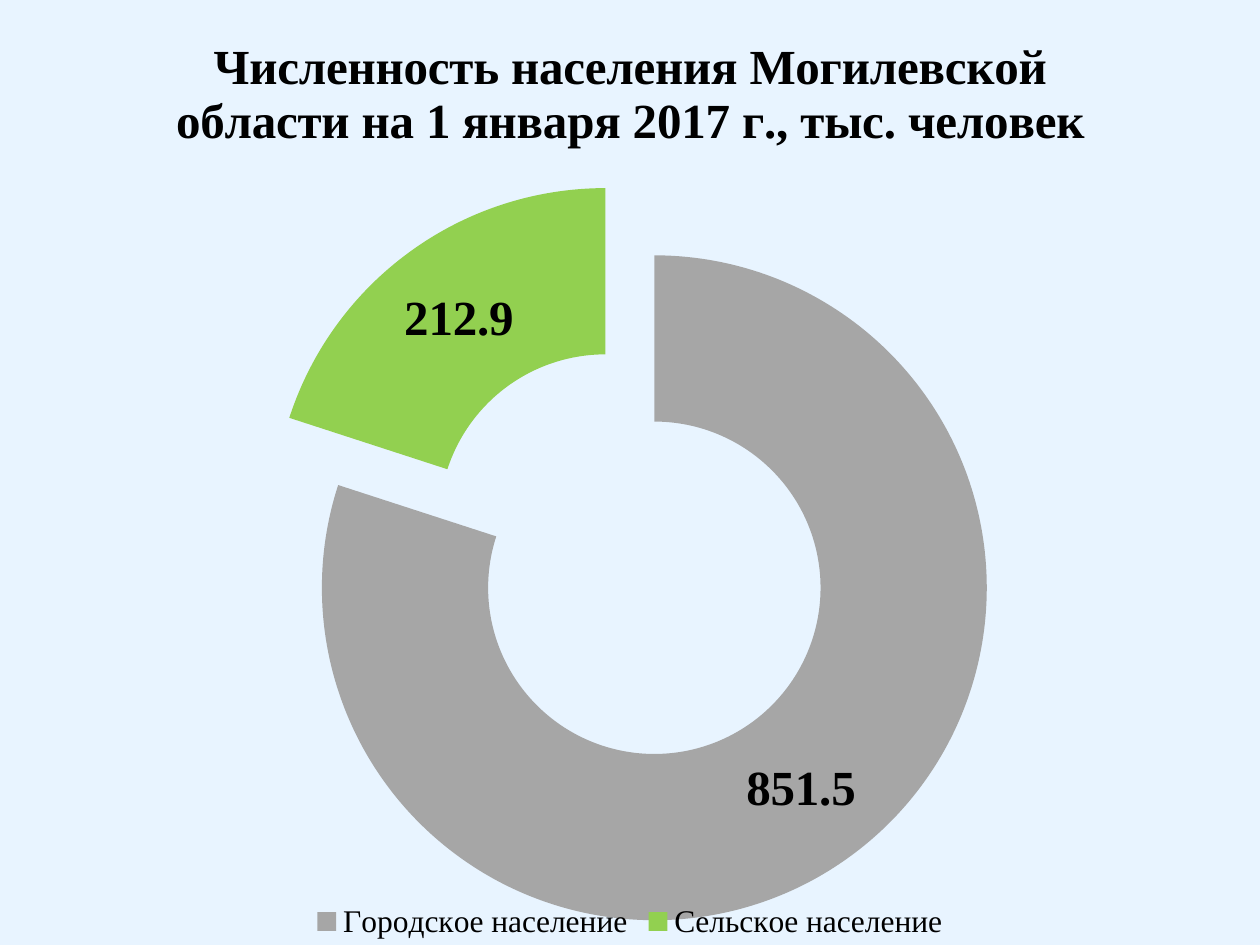
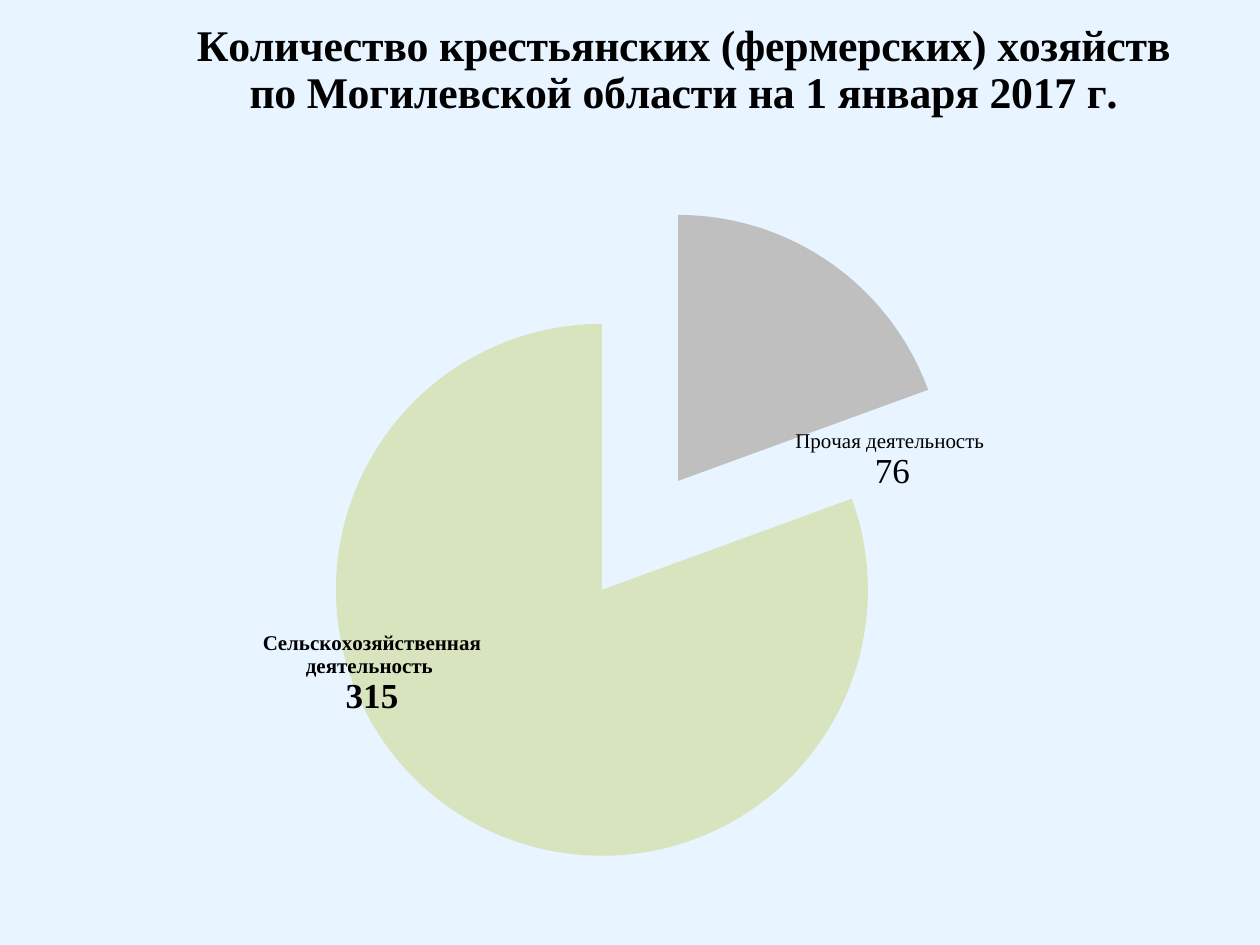
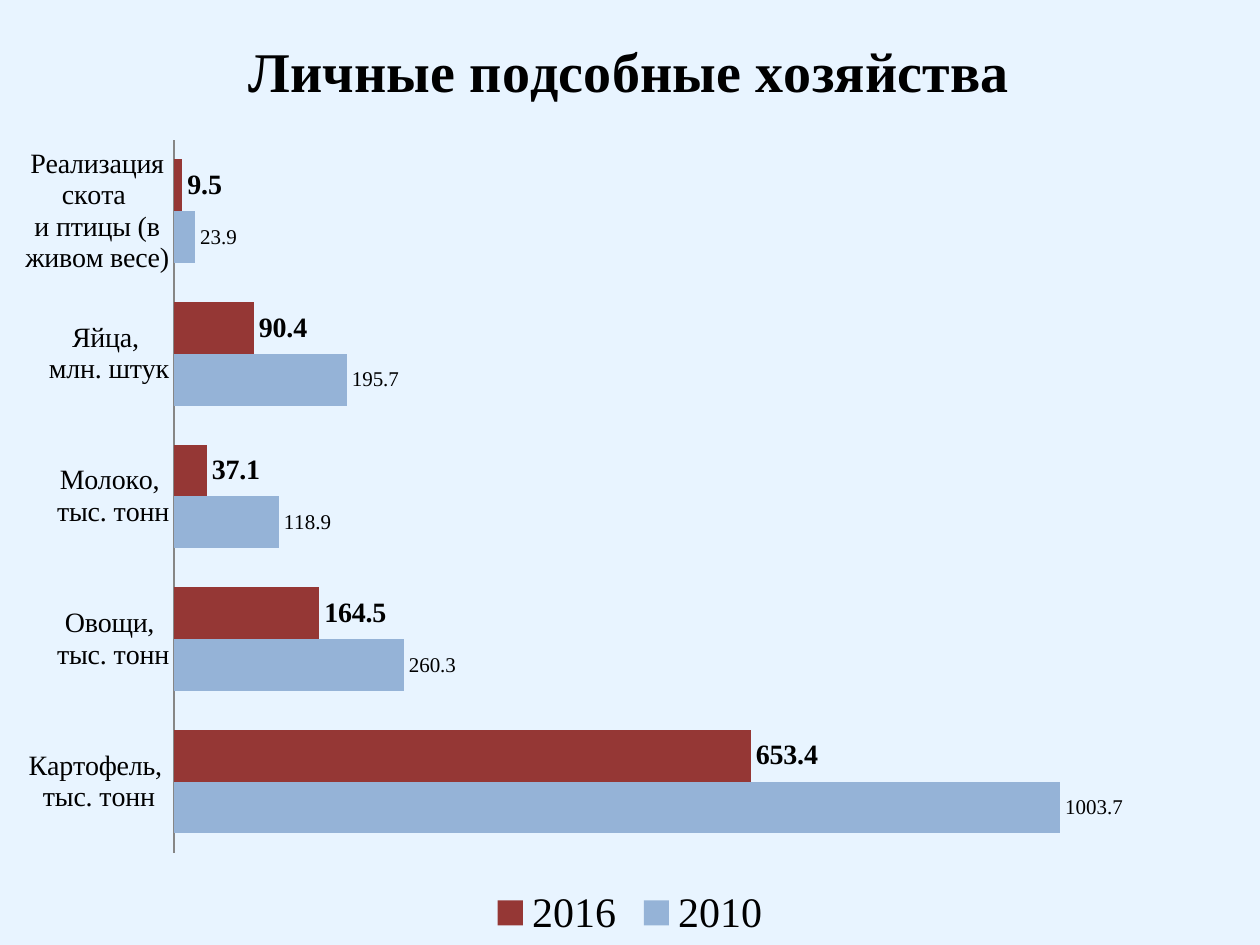
"""Build three chart slides on the population and farming of the Mogilev region."""
import pptx
import pptx.chart.data
import pptx.dml.color
import pptx.enum.chart
import pptx.oxml
import pptx.oxml.ns
import pptx.util

COLORS = {
    "background": "E8F4FF",
    "text": "000000",
    "urban": "A6A6A6",
    "rural": "92D050",
    "other": "BFBFBF",
    "agriculture": "D7E4BD",
    "2010": "95B3D7",
    "2016": "953735",
    "axis": "868686",
}
SERIF = "Times New Roman"
FULL_SLIDE = (0, 0, 720, 540)
FARMS_FRAME = (0, 1.4, 717, 538.6)
POPULATION = "Численность населения Могилевской области на 1 января 2017 г., тыс. человек"
FARMS = "Количество крестьянских (фермерских) хозяйств по Могилевской области на 1 января 2017 г."
HOUSEHOLDS = "Личные подсобные хозяйства"


def rgb(name):
    """Return the palette colour with this name."""
    return pptx.dml.color.RGBColor.from_string(COLORS[name])


def apply_format(target, values):
    """Set each attribute of the target from a dict."""
    for attribute, value in values.items():
        setattr(target, attribute, value)


def style_font(font, size, bold=False, name=SERIF):
    """Give a font its face, size, weight and the text colour."""
    apply_format(font, {"name": name, "size": pptx.util.Pt(size), "bold": bold})
    font.color.rgb = rgb("text")


def chart_xml(tag, content="", attributes=""):
    """Return a chart element parsed from its parts."""
    namespaces = pptx.oxml.ns.nsdecls("c", "a")
    return pptx.oxml.parse_xml(f"<c:{tag} {namespaces} {attributes}>{content}</c:{tag}>")


def set_layout(parent, index, frame, lengths, modes=()):
    """Place a chart part by lengths in points within the chart frame."""
    for previous in parent.xpath("./c:layout"):
        parent.remove(previous)
    fractions = [length / frame[2 + side % 2] for side, length in enumerate(lengths)]
    values = [*modes, *zip("xywh", fractions)]
    content = "".join(f'<c:{tag} val="{value}"/>' for tag, value in values)
    parent.insert(index, chart_xml("layout", f"<c:manualLayout>{content}</c:manualLayout>"))


def add_titled_chart(deck, kind, frame, categories, series, title, title_size, title_at, plot_at):
    """Add a slide filled with one titled, transparent chart."""
    slide = deck.slides.add_slide(deck.slide_layouts[6])
    figures = pptx.chart.data.CategoryChartData()
    figures.categories = categories
    for name, values in series.items():
        figures.add_series(name, values)
    frame_points = [pptx.util.Pt(length) for length in frame]
    chart = slide.shapes.add_chart(kind, *frame_points, figures).chart
    style_font(chart.font, 10, name="Calibri")
    apply_format(chart, {"has_title": True, "has_legend": False})
    heading = chart.chart_title.text_frame
    heading.text = title
    style_font(heading.paragraphs[0].runs[0].font, title_size, bold=True)

    edges = [("xMode", "edge"), ("yMode", "edge")]
    set_layout(chart.element.xpath("./c:chart/c:title")[0], 1, frame, title_at, edges)
    plot_area = chart.element.xpath("./c:chart/c:plotArea")[0]
    set_layout(plot_area, 0, frame, plot_at, [("layoutTarget", "inner"), *edges])
    clear = "<a:noFill/><a:ln><a:noFill/></a:ln>"
    plot_area.append(chart_xml("spPr", clear))
    chart.element.xpath("./c:chart")[0].addnext(chart_xml("spPr", clear))
    return chart


def add_legend(chart, size, overlay=False):
    """Show the legend at the bottom of the chart."""
    chart.has_legend = True
    apply_format(chart.legend, {
        "position": pptx.enum.chart.XL_LEGEND_POSITION.BOTTOM,
        "include_in_layout": overlay,
    })
    style_font(chart.legend.font, size)


def show_values(series, size, bold=False):
    """Show the values of a series and return its labels."""
    labels = series.data_labels
    labels.show_value = True
    style_font(labels.font, size, bold)
    return labels


def split_slices(chart, slice_colors):
    """Pull the slices apart and colour each of them."""
    chart.plots[0].vary_by_categories = True
    chart.element.xpath(".//c:ser/c:tx")[0].addnext(chart_xml("explosion", attributes='val="25"'))
    points = chart.plots[0].series[0].points
    for index, color in enumerate(slice_colors):
        fill = points[index].format.fill
        fill.solid()
        fill.fore_color.rgb = rgb(color)


def label_slice(chart, index, category, value, bold, offset):
    """Write a category over its value beside a slice."""
    label = chart.plots[0].series[0].points[index].data_label
    frame = label.text_frame
    for paragraph, text, size in (
        (frame.paragraphs[0], f"{category} ", 12),
        (frame.add_paragraph(), str(value), 20),
    ):
        run = paragraph.add_run()
        run.text = text
        style_font(run.font, size, bold)
    label.position = pptx.enum.chart.XL_LABEL_POSITION.CENTER
    element = chart.element.xpath(f".//c:dLbl[c:idx/@val='{index}']")[0]
    set_layout(element, 1, FARMS_FRAME, offset)


def add_population(deck):
    """Add the doughnut of urban and rural population."""
    chart = add_titled_chart(
        deck, pptx.enum.chart.XL_CHART_TYPE.DOUGHNUT_EXPLODED, FULL_SLIDE,
        ["Городское население", "Сельское население"], {POPULATION: [851.5, 212.9]},
        POPULATION, 28, (95.5, 15), (144, 103, 432, 427.5))
    split_slices(chart, ["urban", "rural"])
    show_values(chart.plots[0].series[0], 28, bold=True)
    add_legend(chart, 18, overlay=True)


def add_farms(deck):
    """Add the pie of farms by activity."""
    categories = ["Прочая деятельность", "Сельскохозяйственная деятельность"]
    counts = [76, 315]
    chart = add_titled_chart(
        deck, pptx.enum.chart.XL_CHART_TYPE.PIE, FARMS_FRAME,
        categories, {FARMS: counts},
        FARMS, 25, (108, 4.4), (175.8, 113.1, 380, 383))
    split_slices(chart, ["other", "agriculture"])
    labels = show_values(chart.plots[0].series[0], 16)
    labels.show_category_name = True
    offsets = [(78.9, 50.7), (-87.8, -14)]
    for index, (category, count, offset) in enumerate(zip(categories, counts, offsets)):
        label_slice(chart, index, category, count, index == 1, offset)


def add_households(deck):
    """Add the bars of household output in two years."""
    output = {
        "2010": [1003.7, 260.3, 118.9, 195.7, 23.9],
        "2016": [653.4, 164.5, 37.1, 90.4, 9.5],
    }
    products = ["Картофель, \nтыс. тонн", "Овощи, \nтыс. тонн", "Молоко, \nтыс. тонн",
                "Яйца, \nмлн. штук", "Реализация скота \nи птицы (в живом весе)"]
    chart = add_titled_chart(
        deck, pptx.enum.chart.XL_CHART_TYPE.BAR_CLUSTERED, FULL_SLIDE, products, output,
        HOUSEHOLDS, 32, (136, 14.6), (99.5, 80, 605.5, 407.5))
    apply_format(chart.plots[0], {"gap_width": 75, "overlap": 0, "vary_by_categories": False})
    for year, size, bold in zip(chart.plots[0].series, (12, 16), (False, True)):
        year.format.fill.solid()
        year.format.fill.fore_color.rgb = rgb(year.name)
        labels = show_values(year, size, bold)
        labels.position = pptx.enum.chart.XL_LABEL_POSITION.OUTSIDE_END
    apply_format(chart.value_axis, {
        "visible": False, "has_major_gridlines": False,
        "minimum_scale": 0, "maximum_scale": 1200,
    })
    product_axis = chart.category_axis
    product_axis.major_tick_mark = pptx.enum.chart.XL_TICK_MARK.NONE
    style_font(product_axis.tick_labels.font, 16)
    product_axis.format.line.color.rgb = rgb("axis")
    product_axis.format.line.width = pptx.util.Pt(1)
    add_legend(chart, 24)


def main():
    """Build and save the deck."""
    deck = pptx.Presentation()
    apply_format(deck, {"slide_width": pptx.util.Pt(720), "slide_height": pptx.util.Pt(540)})
    backdrop = deck.slide_master.background.fill
    backdrop.solid()
    backdrop.fore_color.rgb = rgb("background")
    add_population(deck)
    add_farms(deck)
    add_households(deck)
    deck.save("out.pptx")


if __name__ == "__main__":
    main()
